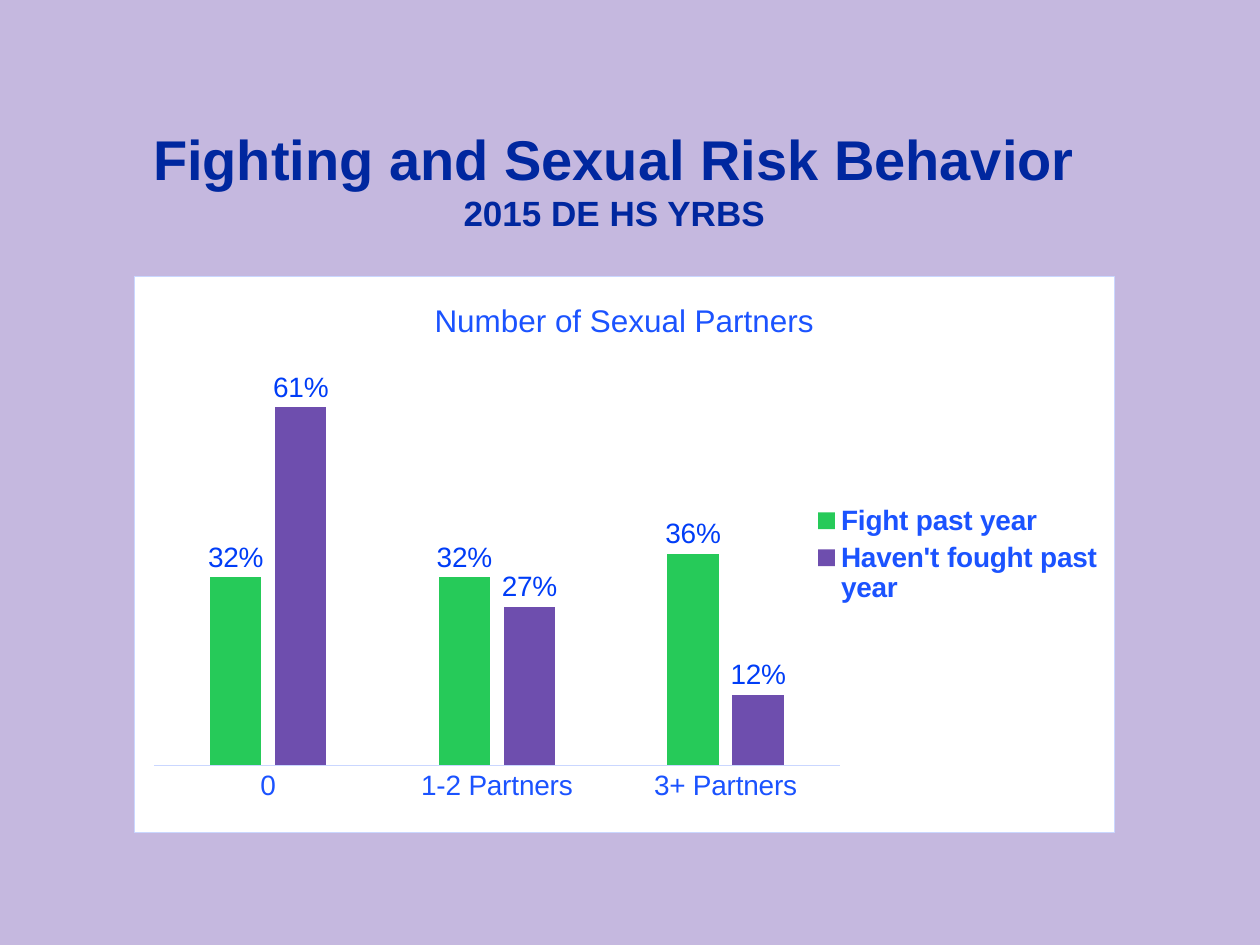
import dataclasses

import lxml.etree
import pptx
import pptx.chart.data
import pptx.dml.color
import pptx.enum.chart
import pptx.enum.text
import pptx.oxml
import pptx.oxml.ns
import pptx.util

Inches = pptx.util.Inches


@dataclasses.dataclass(frozen=True)
class Theme:
    """Colours, font and type sizes of the slide."""
    font: str = "Arial"
    background: str = "C5B8DF"
    heading: str = "00279F"
    panel: str = "FFFFFF"
    border: str = "CAD7FF"
    chart_text: str = "1B53FF"
    value_text: str = "003DF7"
    bars: tuple = ("26CA59", "6E4EAE")
    title_size: int = 32
    subtitle_size: int = 20
    chart_title_size: int = 18
    chart_size: int = 16
    line_width: float = 0.75


THEME = Theme()


def rgb(value):
    """Return a colour object for a hex string."""
    return pptx.dml.color.RGBColor.from_string(value)


def set_format(target, **values):
    """Set each given attribute on the target."""
    for name, value in values.items():
        setattr(target, name, value)


def set_font(font, size, color, bold=False):
    """Apply the theme font with a size, colour and weight."""
    set_format(font, name=THEME.font, size=pptx.util.Pt(size), bold=bold)
    font.color.rgb = rgb(color)


def set_layout(parent, position, box, inner=False):
    """Place a chart part at fractions of the chart area."""
    for old in parent.findall(pptx.oxml.ns.qn("c:layout")):
        parent.remove(old)
    layout = pptx.oxml.parse_xml(
        f'<c:layout {pptx.oxml.ns.nsdecls("c")}><c:manualLayout/></c:layout>')
    settings = [("layoutTarget", "inner")] if inner else []
    settings += [("xMode", "edge"), ("yMode", "edge"), *zip("xywh", box)]
    for tag, value in settings:
        lxml.etree.SubElement(layout[0], pptx.oxml.ns.qn(f"c:{tag}"), val=str(value))
    parent.insert(position, layout)


def set_panel(chart):
    """Fill and outline the chart area."""
    panel = pptx.oxml.parse_xml(
        f'<c:spPr {pptx.oxml.ns.nsdecls("c", "a")}>'
        f'<a:solidFill><a:srgbClr val="{THEME.panel}"/></a:solidFill>'
        f'<a:ln w="{pptx.util.Pt(THEME.line_width)}"><a:solidFill>'
        f'<a:srgbClr val="{THEME.border}"/></a:solidFill></a:ln></c:spPr>')
    chart.element.find(pptx.oxml.ns.qn("c:chart")).addnext(panel)


def add_heading(s, left, top, width, height):
    """Place the title and its subtitle line in the title placeholder."""
    sp = s.shapes.title
    set_format(sp, left=left, top=top, width=width, height=height)
    tf = sp.text_frame
    set_format(tf, word_wrap=True, vertical_anchor=pptx.enum.text.MSO_ANCHOR.TOP,
               auto_size=pptx.enum.text.MSO_AUTO_SIZE.SHAPE_TO_FIT_TEXT)
    tf.text = "Fighting and Sexual Risk Behavior\n2015 DE HS YRBS"
    for p, size in zip(tf.paragraphs, (THEME.title_size, THEME.subtitle_size)):
        p.alignment = pptx.enum.text.PP_ALIGN.CENTER
        set_font(p.runs[0].font, size, THEME.heading, bold=True)


def format_axes(chart):
    """Show a plain category axis and hide the value axis."""
    axis = chart.category_axis
    set_format(axis, major_tick_mark=pptx.enum.chart.XL_TICK_MARK.NONE)
    set_font(axis.tick_labels.font, THEME.chart_size, THEME.chart_text)
    line = axis.format.line
    line.width = pptx.util.Pt(THEME.line_width)
    line.color.rgb = rgb(THEME.border)
    set_format(chart.value_axis, visible=False, has_major_gridlines=False,
               minimum_scale=0, maximum_scale=0.7)


def format_bars(plot):
    """Colour the bars and label them with percentages."""
    set_format(plot, gap_width=219, overlap=-27, vary_by_categories=False)
    for series, color in zip(plot.series, THEME.bars):
        series.format.fill.solid()
        series.format.fill.fore_color.rgb = rgb(color)
        labels = series.data_labels
        set_format(labels, show_value=True, number_format="0%",
                   number_format_is_linked=False,
                   position=pptx.enum.chart.XL_LABEL_POSITION.OUTSIDE_END)
        set_font(labels.font, THEME.chart_size, THEME.value_text)


def format_legend(chart):
    """Place the legend to the right of the bars."""
    chart.has_legend = True
    legend = chart.legend
    set_format(legend, include_in_layout=False,
               position=pptx.enum.chart.XL_LEGEND_POSITION.RIGHT)
    set_font(legend.font, THEME.chart_size, THEME.chart_text, bold=True)
    set_layout(legend._element, 1, (0.69, 0.4, 0.3, 0.2))


def add_partner_chart(s, left, top, width, height):
    """Place the column chart of partners by fighting history."""
    data = pptx.chart.data.CategoryChartData(number_format="0%")
    data.categories = ["0", "1-2 Partners", "3+ Partners"]
    data.add_series("Fight past year", (0.32, 0.32, 0.36))
    data.add_series("Haven't fought past year", (0.61, 0.27, 0.12))
    kind = pptx.enum.chart.XL_CHART_TYPE.COLUMN_CLUSTERED
    chart = s.shapes.add_chart(kind, left, top, width, height, data).chart
    set_font(chart.font, 10, THEME.heading)
    tf = chart.chart_title.text_frame
    tf.text = "Number of Sexual Partners"
    set_font(tf.paragraphs[0].runs[0].font, THEME.chart_title_size, THEME.chart_text)
    chart.chart_title.include_in_layout = False
    format_axes(chart)
    format_bars(chart.plots[0])
    format_legend(chart)
    set_layout(chart.element.find(".//" + pptx.oxml.ns.qn("c:plotArea")), 0,
               (0.02, 0.14, 0.7, 0.74), inner=True)
    set_panel(chart)


def main():
    """Build and save the slide."""
    prs = pptx.Presentation()
    set_format(prs, slide_width=Inches(10), slide_height=Inches(7.5))
    s = prs.slides.add_slide(prs.slide_layouts.get_by_name("Title Only"))
    s.background.fill.solid()
    s.background.fill.fore_color.rgb = rgb(THEME.background)
    add_heading(s, Inches(0.64), Inches(0.94), Inches(8.47), Inches(0.98))
    add_partner_chart(s, Inches(1.06), Inches(2.19), Inches(7.79), Inches(4.42))
    prs.save("out.pptx")


if __name__ == "__main__":
    main()
